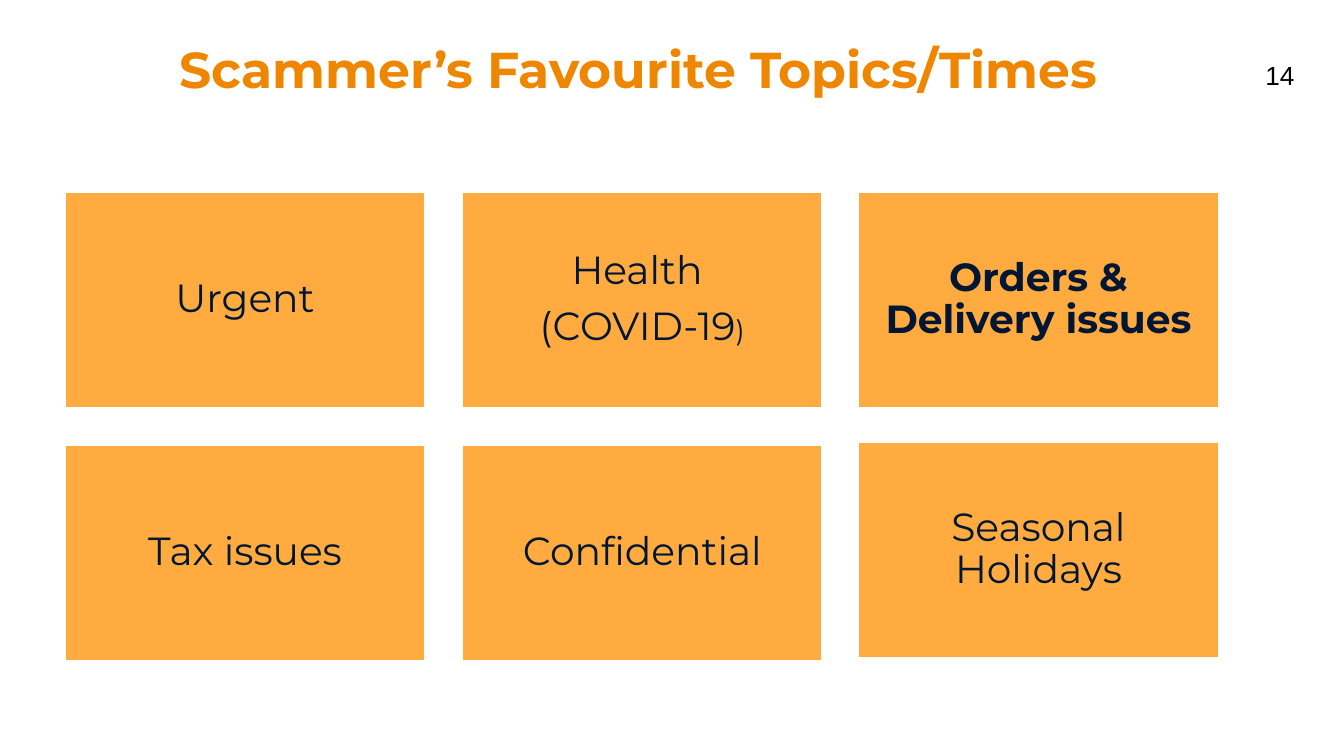
from dataclasses import dataclass

from pptx import Presentation
from pptx.dml.color import RGBColor
from pptx.enum.shapes import MSO_SHAPE
from pptx.enum.text import MSO_ANCHOR, MSO_AUTO_SIZE, PP_ALIGN
from pptx.slide import Slide
from pptx.text.text import Font, TextFrame
from pptx.util import Inches, Pt

ORANGE, AMBER, NAVY, WHITE, BLACK = "EF8600", "FFAB40", "001633", "FFFFFF", "000000"
CARD_W, CARD_H = 3.58, 2.15
COLUMNS = (0.64, 4.58, 8.51)
ROWS = (1.9, 4.41)


@dataclass
class Run:
    text: str
    size: float = 28


@dataclass
class Topic:
    column: int
    row: int
    lines: list[list[Run]]
    bold: bool = False
    shift: float = 0


TOPICS = [
    Topic(0, 0, [[Run("Urgent")]]),
    Topic(1, 0, [[Run("Health ")], [Run("(COVID-19"), Run(")", 20)]]),
    Topic(2, 0, [[Run("Orders & Delivery issues")]], bold=True),
    Topic(0, 1, [[Run("Tax issues")]]),
    Topic(1, 1, [[Run("Confidential")]]),
    Topic(2, 1, [[Run("Seasonal Holidays")]], shift=-0.03),
]


def rgb(value: str) -> RGBColor:
    return RGBColor.from_string(value)


def set_font(font: Font, name: str, size: float, color: str, bold: bool = False) -> None:
    font.name = name
    font.size = Pt(size)
    font.bold = bold
    font.color.rgb = rgb(color)


def set_frame(tf: TextFrame, inset: float, anchor: MSO_ANCHOR) -> None:
    tf.word_wrap = True
    tf.auto_size = MSO_AUTO_SIZE.NONE
    tf.vertical_anchor = anchor
    tf.margin_left = tf.margin_right = Inches(inset)
    tf.margin_top = tf.margin_bottom = Inches(inset)


def add_title(s: Slide, text: str) -> None:
    sp = s.shapes.title
    sp.left, sp.top = Inches(0.96), Inches(0.25)
    sp.width, sp.height = Inches(10.75), Inches(0.99)
    set_frame(sp.text_frame, 0.13, MSO_ANCHOR.TOP)
    p = sp.text_frame.paragraphs[0]
    p.text = text
    p.alignment = PP_ALIGN.CENTER
    set_font(p.font, "Montserrat", 36, ORANGE, bold=True)


def add_page_number(s: Slide, number: int) -> None:
    sp = s.shapes.add_textbox(Inches(12.42), Inches(0.32), Inches(0.92), Inches(0.84))
    set_frame(sp.text_frame, 0.13, MSO_ANCHOR.MIDDLE)
    p = sp.text_frame.paragraphs[0]
    p.text = str(number)
    set_font(p.font, "Arial", 18.7, BLACK)


def add_topic(s: Slide, topic: Topic) -> None:
    sp = s.shapes.add_shape(
        MSO_SHAPE.RECTANGLE,
        Inches(COLUMNS[topic.column]), Inches(ROWS[topic.row] + topic.shift),
        Inches(CARD_W), Inches(CARD_H),
    )
    sp.shadow.inherit = False
    sp.fill.solid()
    sp.fill.fore_color.rgb = rgb(AMBER)
    sp.line.color.rgb = rgb(WHITE)
    sp.line.width = Pt(2)

    tf = sp.text_frame
    set_frame(tf, 0.12, MSO_ANCHOR.MIDDLE)
    for i, line in enumerate(topic.lines):
        p = tf.add_paragraph() if i else tf.paragraphs[0]
        p.alignment = PP_ALIGN.CENTER
        p.line_spacing = 0.9
        p.space_after = Pt(9.8)
        for run in line:
            r = p.add_run()
            r.text = run.text
            set_font(r.font, "Montserrat", run.size, NAVY, topic.bold)


def main() -> None:
    prs = Presentation()
    prs.slide_width, prs.slide_height = Inches(13.33), Inches(7.5)
    s = prs.slides.add_slide(prs.slide_layouts[5])

    # Heading and page number
    add_title(s, "Scammer’s Favourite Topics/Times")
    add_page_number(s, 14)

    # Grid of topics
    for topic in TOPICS:
        add_topic(s, topic)

    prs.save("out.pptx")


if __name__ == "__main__":
    main()
